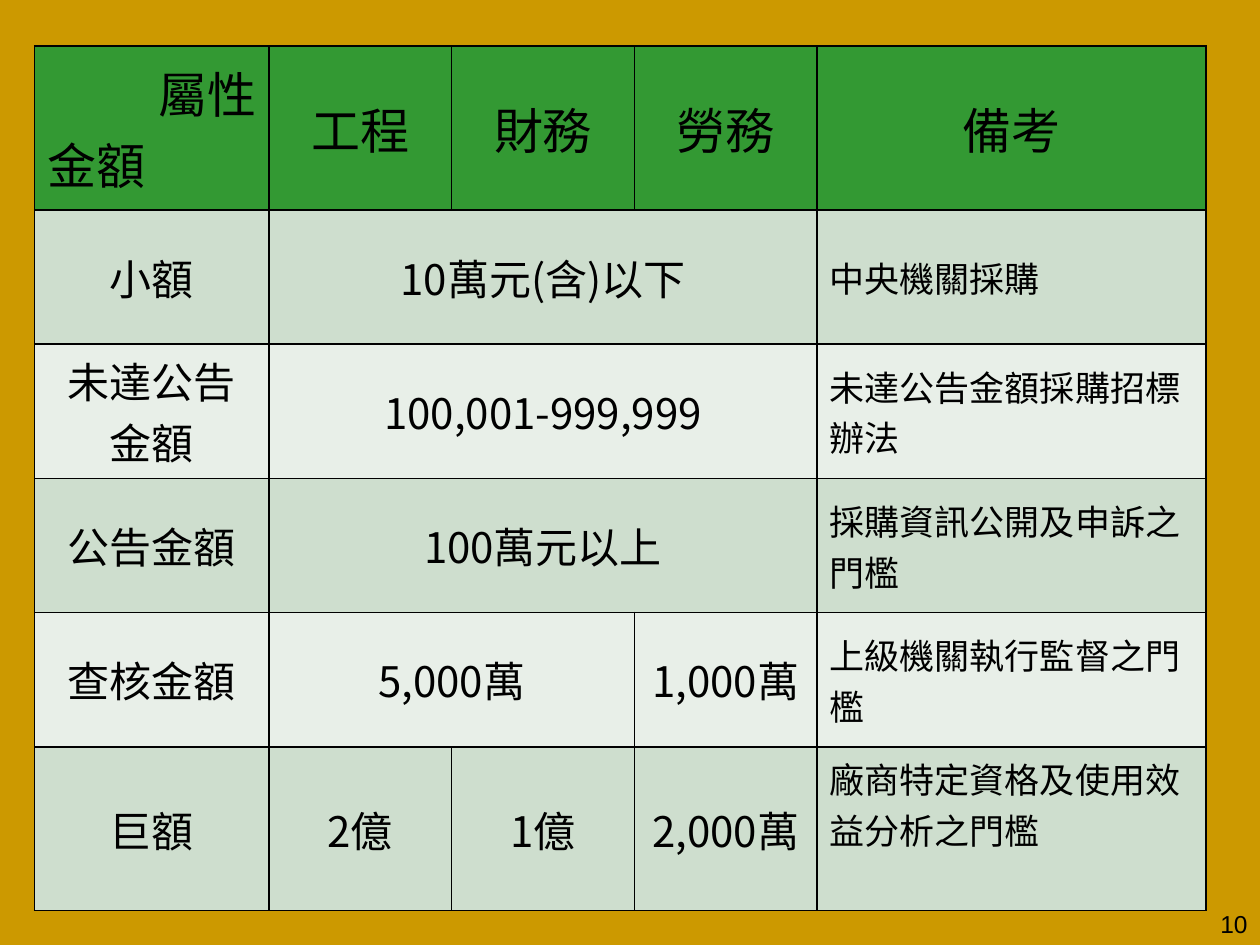
import pptx
import pptx.dml.color
import pptx.enum.text
import pptx.oxml.ns
import pptx.util
from lxml import etree

Pt = pptx.util.Pt
Align = pptx.enum.text.PP_ALIGN
Anchor = pptx.enum.text.MSO_ANCHOR
qn = pptx.oxml.ns.qn

CJK_FONT = "Noto Sans CJK SC"
BLACK = "000000"
COLUMN_WIDTHS = [133.9, 104.4, 104.4, 104.4, 222.2]
ROW_HEIGHTS = [93.6, 76.6, 76.6, 76.6, 76.6, 93.6]
ROW_FILLS = ["339933", "CEDECE", "E8EFE8", "CEDECE", "E8EFE8", "CEDECE"]
ROWS = [
    ["屬性\n金額", "工程", "財務", "勞務", "備考"],
    ["小額", "10萬元(含)以下", None, None, "中央機關採購"],
    ["未達公告金額", "100,001-999,999", None, None, "未達公告金額採購招標辦法"],
    ["公告金額", "100萬元以上", None, None, "採購資訊公開及申訴之門檻"],
    ["查核金額", "5,000萬", None, "1,000萬", "上級機關執行監督之門檻"],
    ["巨額", "2億", "1億", "2,000萬", "廠商特定資格及使用效益分析之門檻"],
]
MERGES = [(1, 1, 3), (2, 1, 3), (3, 1, 3), (4, 1, 2)]


def color(value):
    return pptx.dml.color.RGBColor.from_string(value)


def style_paragraph(para, size, align, font_name):
    para.alignment = align
    para.font.size = Pt(size)
    para.font.name = font_name
    para.font.color.rgb = color(BLACK)
    defaults = para._p.pPr.find(qn("a:defRPr"))
    etree.SubElement(defaults, qn("a:ea"), typeface=font_name)


def add_borders(cell):
    properties = cell._tc.get_or_add_tcPr()
    for side in ("lnL", "lnR", "lnT", "lnB"):
        line = etree.SubElement(properties, qn(f"a:{side}"), w=str(Pt(1)))
        fill = etree.SubElement(line, qn("a:solidFill"))
        etree.SubElement(fill, qn("a:srgbClr"), val=BLACK)


def add_amount_table(page, left, top):
    table = page.shapes.add_table(
        len(ROWS), len(COLUMN_WIDTHS), Pt(left), Pt(top),
        Pt(sum(COLUMN_WIDTHS)), Pt(sum(ROW_HEIGHTS))).table
    for column, width in zip(table.columns, COLUMN_WIDTHS):
        column.width = Pt(width)
    last_column = len(COLUMN_WIDTHS) - 1
    for row_index, texts in enumerate(ROWS):
        table.rows[row_index].height = Pt(ROW_HEIGHTS[row_index])
        for column_index, text in enumerate(texts):
            cell = table.cell(row_index, column_index)
            add_borders(cell)
            cell.fill.solid()
            cell.fill.fore_color.rgb = color(ROW_FILLS[row_index])
            cell.vertical_anchor = Anchor.MIDDLE
            if text is None:
                continue
            cell.text = text
            is_note = row_index > 0 and column_index == last_column
            size = 28 if row_index == 0 else 20 if is_note else 24
            align = Align.LEFT if is_note else Align.CENTER
            for para in cell.text_frame.paragraphs:
                style_paragraph(para, size, align, CJK_FONT)
    for row_index, first, last in MERGES:
        table.cell(row_index, first).merge(table.cell(row_index, last))
    attribute, amount = table.cell(0, 0).text_frame.paragraphs
    attribute.alignment = Align.RIGHT
    amount.alignment = Align.LEFT
    table.cell(len(ROWS) - 1, last_column).vertical_anchor = Anchor.TOP


def add_page_number(page, left, top, width, height):
    box = page.shapes.add_textbox(Pt(left), Pt(top), Pt(width), Pt(height))
    frame = box.text_frame
    frame.word_wrap = True
    frame.text = "10"
    style_paragraph(frame.paragraphs[0], 14, Align.RIGHT, "Arial")


def main():
    deck = pptx.Presentation()
    deck.slide_width, deck.slide_height = Pt(720), Pt(540)
    page = deck.slides.add_slide(deck.slide_layouts[6])
    page.background.fill.solid()
    page.background.fill.fore_color.rgb = color("CC9900")
    add_amount_table(page, 19.8, 26.3)
    add_page_number(page, 570, 516, 150, 24)
    deck.save("out.pptx")


if __name__ == "__main__":
    main()
